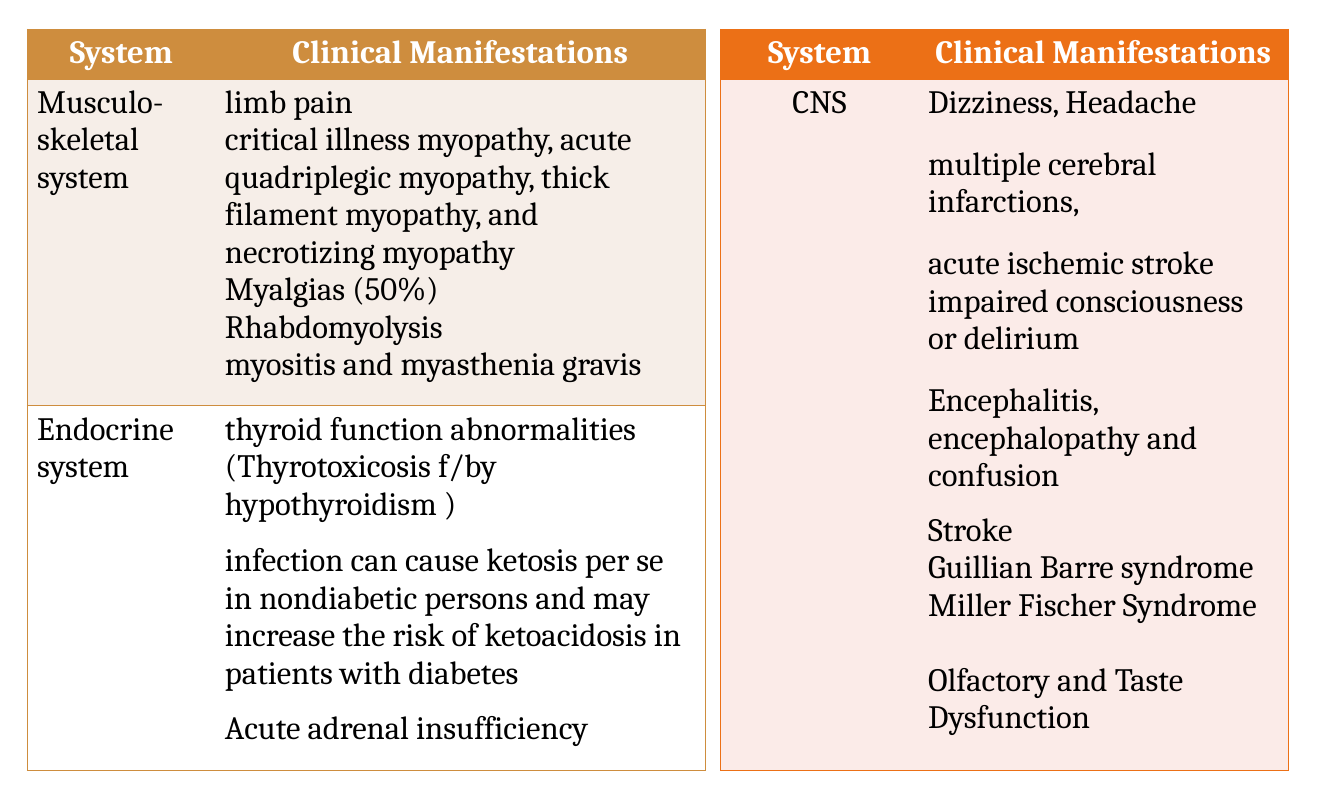
import pptx
import pptx.util
import pptx.dml.color
import pptx.enum.text
import pptx.oxml
import pptx.oxml.ns

Pt = pptx.util.Pt
RGBColor = pptx.dml.color.RGBColor
ALIGN = pptx.enum.text.PP_ALIGN

OCHRE = RGBColor(0xCE, 0x8D, 0x3E)
ORANGE = RGBColor(0xEC, 0x70, 0x16)
SAND = RGBColor(0xF6, 0xEE, 0xE8)
ROSE = RGBColor(0xFB, 0xEB, 0xE8)
WHITE = RGBColor(0xFF, 0xFF, 0xFF)
BLACK = RGBColor(0, 0, 0)

# Content: each finding is (text, space before in points)
HEADER = ("System", "Clinical Manifestations")
MUSCLE = [
    ("limb pain", 0),
    ("critical illness myopathy, acute quadriplegic myopathy, "
     "thick filament myopathy, and necrotizing myopathy", 0),
    ("Myalgias (50%)", 0),
    ("Rhabdomyolysis", 0),
    ("myositis and myasthenia gravis", 0),
]
ENDOCRINE = [
    ("thyroid function abnormalities (Thyrotoxicosis f/by hypothyroidism )", 0),
    ("infection can cause ketosis per se in nondiabetic persons and may "
     "increase the risk of ketoacidosis in patients with diabetes", 14),
    ("Acute adrenal insufficiency", 13),
]
CNS = [
    ("Dizziness, Headache", 0),
    ("multiple cerebral infarctions,", 18),
    ("acute ischemic stroke", 18),
    ("impaired consciousness or delirium", 0),
    ("Encephalitis,", 18),
    ("encephalopathy and confusion", 0),
    ("Stroke", 12.5),
    ("Guillian Barre syndrome Miller Fischer Syndrome", 0),
    ("Olfactory and Taste Dysfunction", 27.5),
]

TOP, HEADER_H, TABLE_H = 21.6, 36.7, 545.8
# Body rows: system, findings, fill, height, alignment of the system name
TABLES = [
    dict(left=20.2, cols=(138.2, 360.7), accent=OCHRE, rows=[
        ("Musculo-skeletal system", MUSCLE, SAND, 240.5, ALIGN.LEFT),
        ("Endocrine system", ENDOCRINE, WHITE, 268.6, ALIGN.LEFT)]),
    dict(left=530.6, cols=(145.4, 272.2), accent=ORANGE, rows=[
        ("CNS", CNS, ROSE, TABLE_H - HEADER_H, ALIGN.CENTER)]),
]


def set_borders(cell, accent, shown):
    """Draw the sides in shown (L, R, T, B) and clear the others."""
    tcPr = cell._tc.get_or_add_tcPr()
    for i, side in enumerate("LRTB"):
        paint = (f'<a:solidFill><a:srgbClr val="{accent}"/></a:solidFill>'
                 if side in shown else "<a:noFill/>")
        tcPr.insert(i, pptx.oxml.parse_xml(
            f'<a:ln{side} {pptx.oxml.ns.nsdecls("a")} w="{Pt(1)}">{paint}</a:ln{side}>'))


def fill_cell(cell, lines, fill, color, bold, align):
    cell.fill.solid()
    cell.fill.fore_color.rgb = fill
    tf = cell.text_frame
    for i, (text, gap) in enumerate(lines):
        p = tf.add_paragraph() if i else tf.paragraphs[0]
        p.text = text
        p.alignment = align
        if gap:
            p.space_before = Pt(gap)
        p.font.name = "Cambria"
        p.font.size = Pt(24)
        p.font.bold = bold
        p.font.color.rgb = color


def add_system_table(s, left, cols, accent, rows):
    tbl = s.shapes.add_table(len(rows) + 1, len(cols), Pt(left), Pt(TOP),
                             Pt(sum(cols)), Pt(TABLE_H)).table
    tbl.horz_banding = False
    for column, width in zip(tbl.columns, cols):
        column.width = Pt(width)
    heights = [HEADER_H] + [row[3] for row in rows]
    for row, height in zip(tbl.rows, heights):
        row.height = Pt(height)

    # Header row
    for c, title in enumerate(HEADER):
        fill_cell(tbl.cell(0, c), [(title, 0)], accent, WHITE, True, ALIGN.CENTER)
    # Body rows
    for r, (system, findings, fill, _, align) in enumerate(rows, 1):
        fill_cell(tbl.cell(r, 0), [(system, 0)], fill, BLACK, False, align)
        fill_cell(tbl.cell(r, 1), findings, fill, BLACK, False, ALIGN.LEFT)
    # Outline and row lines, no line between the columns
    for r in range(len(heights)):
        set_borders(tbl.cell(r, 0), accent, "LTB")
        set_borders(tbl.cell(r, 1), accent, "RTB")


def main():
    prs = pptx.Presentation()
    prs.slide_width, prs.slide_height = Pt(989.28), Pt(588.96)
    s = prs.slides.add_slide(prs.slide_layouts[6])
    for table in TABLES:
        add_system_table(s, **table)
    prs.save("out.pptx")


if __name__ == "__main__":
    main()
